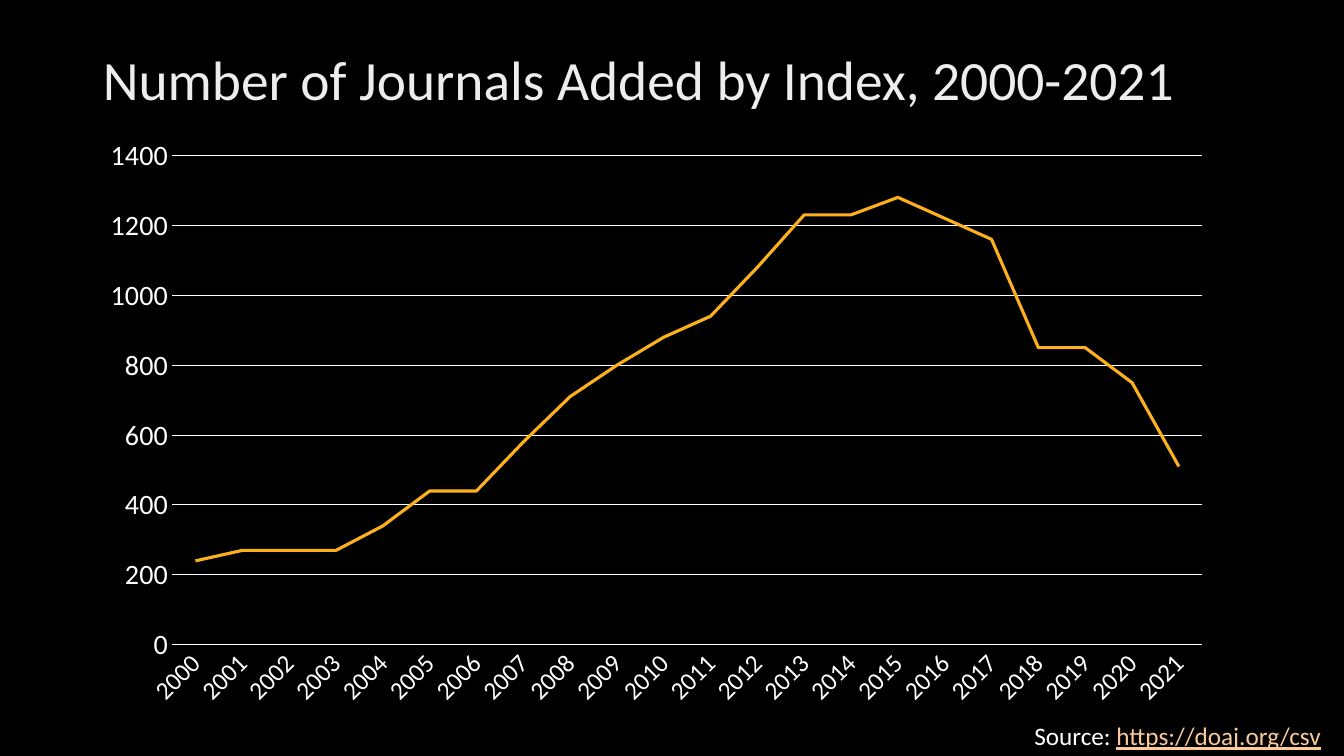
from lxml.etree import SubElement
from pptx import Presentation
from pptx.chart.data import CategoryChartData
from pptx.dml.color import RGBColor
from pptx.enum.chart import XL_CHART_TYPE, XL_MARKER_STYLE, XL_TICK_MARK
from pptx.enum.text import MSO_ANCHOR, MSO_AUTO_SIZE, PP_ALIGN
from pptx.oxml.ns import qn
from pptx.util import Inches, Pt

COLORS = {"background": "000000", "title": "EDEDED", "text": "FFFFFF",
          "line": "FCB11C", "link": "FBCA98"}
FIRST_YEAR = 2000
JOURNALS_ADDED = (240, 270, 270, 270, 340, 440, 440, 580, 710, 800, 880,
                  940, 1080, 1230, 1230, 1280, 1220, 1160, 850, 850, 750, 510)
PLOT_AREA = {"x": 0.07, "y": 0.05, "w": 0.91, "h": 0.83}


class JournalSlide:
    """Holds the style and the current slide, and adds its elements."""

    def __init__(self, page, font_name, colors):
        self.page = page
        self.font_name = font_name
        self.colors = colors
        page.background.fill.solid()
        page.background.fill.fore_color.rgb = self.color("background")

    def color(self, name):
        return RGBColor.from_string(self.colors[name])

    def style_font(self, font, size, color):
        font.name = self.font_name
        font.size = Pt(size)
        font.color.rgb = self.color(color)

    def style_line(self, line, width, color):
        line.width = Pt(width)
        line.color.rgb = self.color(color)

    def add_span(self, para, text, size, color, underline=None):
        span = para.add_run()
        span.text = text
        self.style_font(span.font, size, color)
        span.font.underline = underline

    def add_title(self, text, left, top, width, height):
        title = self.page.shapes.title
        title.left, title.top = Inches(left), Inches(top)
        title.width, title.height = Inches(width), Inches(height)
        frame = title.text_frame
        frame.auto_size = MSO_AUTO_SIZE.NONE
        frame.vertical_anchor = MSO_ANCHOR.TOP
        frame.margin_top = Inches(0.12)
        para = frame.paragraphs[0]
        para.alignment = PP_ALIGN.LEFT
        para.line_spacing = 0.9
        self.add_span(para, text, 39.6, "title")

    def add_line_chart(self, name, categories, values, left, top, width, height):
        data = CategoryChartData()
        data.categories = categories
        data.add_series(name, values)
        chart = self.page.shapes.add_chart(
            XL_CHART_TYPE.LINE, Inches(left), Inches(top),
            Inches(width), Inches(height), data).chart
        chart.has_legend = False
        chart.has_title = False
        self.style_font(chart.font, 10, "text")
        plot = chart.plots[0]
        plot.vary_by_categories = False
        series = plot.series[0]
        series.smooth = False
        series.marker.style = XL_MARKER_STYLE.NONE
        self.style_line(series.format.line, 2.25, "line")
        self.style_axes(chart)
        self.place_plot(chart)

    def style_axes(self, chart):
        years, counts = chart.category_axis, chart.value_axis
        for axis, size in ((years, 18), (counts, 20)):
            axis.major_tick_mark = axis.minor_tick_mark = XL_TICK_MARK.NONE
            self.style_font(axis.tick_labels.font, size, "text")
        self.style_line(years.format.line, 0.75, "text")
        years_text = chart._chartSpace.find(".//" + qn("c:catAx")).find(qn("c:txPr"))
        years_text.find(qn("a:bodyPr")).set("rot", "-2700000")
        counts.minimum_scale, counts.maximum_scale = 0, 1400
        counts.major_unit = 200
        counts.has_major_gridlines = True
        counts.format.line.fill.background()
        self.style_line(counts.major_gridlines.format.line, 0.75, "text")

    def place_plot(self, chart):
        area = chart._chartSpace.find(".//" + qn("c:plotArea"))
        layout = area.find(qn("c:layout"))
        if layout is None:
            layout = SubElement(area, qn("c:layout"))
            area.insert(0, layout)
        manual = SubElement(layout, qn("c:manualLayout"))
        settings = {"layoutTarget": "inner", "xMode": "edge", "yMode": "edge"}
        for tag, value in (settings | PLOT_AREA).items():
            SubElement(manual, qn("c:" + tag)).set("val", str(value))

    def add_source(self, label, address, left, top, width, height):
        box = self.page.shapes.add_textbox(
            Inches(left), Inches(top), Inches(width), Inches(height))
        frame = box.text_frame
        frame.word_wrap = False
        frame.auto_size = MSO_AUTO_SIZE.SHAPE_TO_FIT_TEXT
        para = frame.paragraphs[0]
        self.add_span(para, label, 18, "text")
        self.add_span(para, address, 18, "link", underline=True)


def main():
    deck = Presentation()
    deck.slide_width, deck.slide_height = Inches(13.33), Inches(7.5)
    page = deck.slides.add_slide(deck.slide_layouts[5])
    slide = JournalSlide(page, "Calibri", COLORS)
    slide.add_title("Number of Journals Added by Index, 2000-2021",
                    0.92, 0.4, 11.5, 1.45)
    years = [str(FIRST_YEAR + index) for index in range(len(JOURNALS_ADDED))]
    slide.add_line_chart("Series 1", years, JOURNALS_ADDED,
                         0.92, 1.25, 11.23, 5.85)
    slide.add_source("Source: ", "https://doaj.org/csv", 10.16, 7.1, 3.08, 0.4)
    deck.save("out.pptx")


if __name__ == "__main__":
    main()
